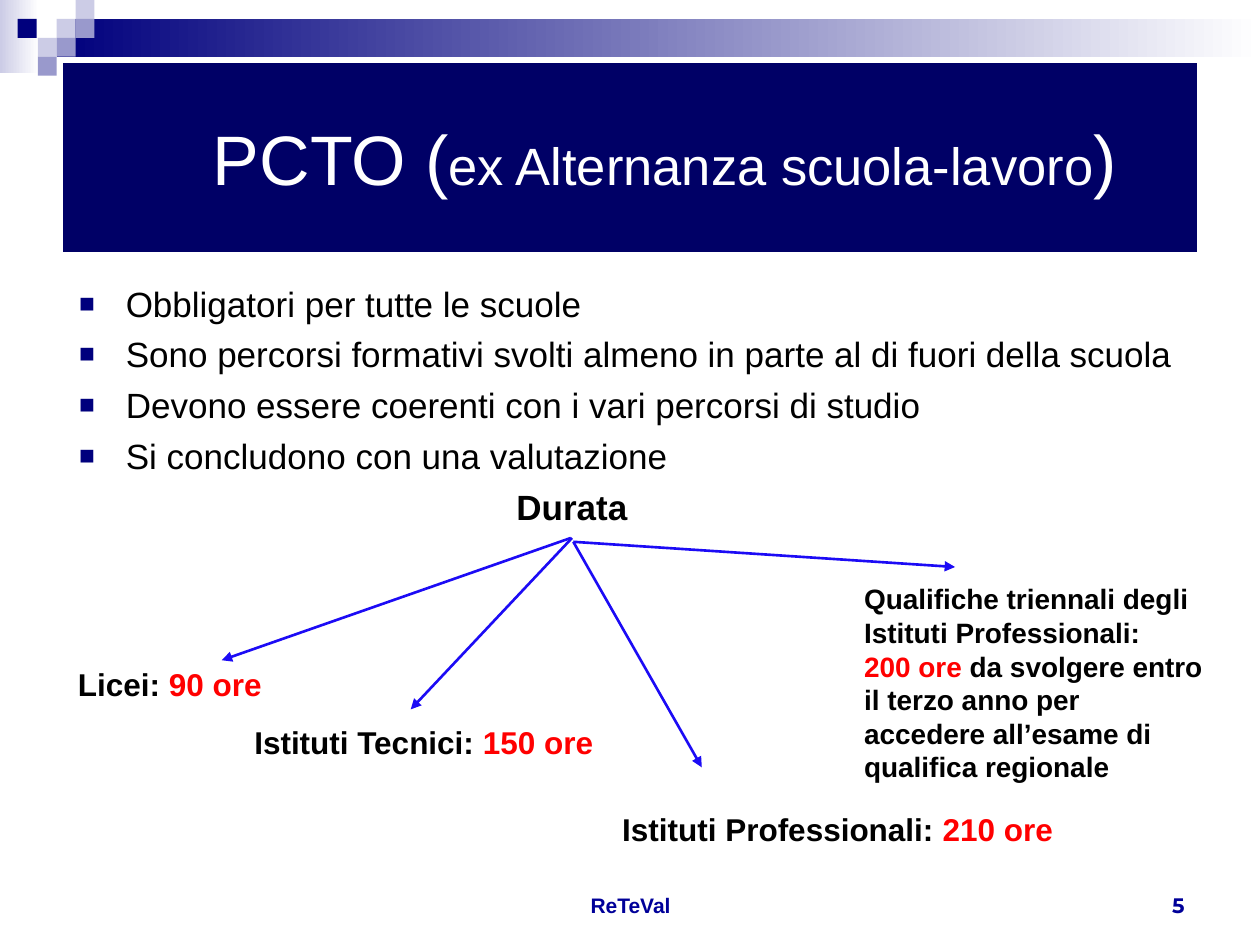
from dataclasses import dataclass

from lxml import etree
from pptx import Presentation
from pptx.dml.color import RGBColor
from pptx.enum.shapes import MSO_CONNECTOR, MSO_SHAPE
from pptx.enum.text import MSO_ANCHOR, MSO_AUTO_SIZE, PP_ALIGN
from pptx.oxml.ns import qn
from pptx.util import Inches, Pt

RECTANGLE = MSO_SHAPE.RECTANGLE
STRAIGHT = MSO_CONNECTOR.STRAIGHT
TOP, MIDDLE, BOTTOM = MSO_ANCHOR.TOP, MSO_ANCHOR.MIDDLE, MSO_ANCHOR.BOTTOM
LEFT, CENTER, RIGHT = PP_ALIGN.LEFT, PP_ALIGN.CENTER, PP_ALIGN.RIGHT
NO_AUTOFIT = MSO_AUTO_SIZE.NONE

NAVY, LILAC, PERIWINKLE = "00007D", "CCCCE6", "9999CC"
TITLE_BLUE, FOOTER_BLUE, ARROW_BLUE = "000066", "000099", "1C0BF5"
WHITE, BLACK, RED = "FFFFFF", "000000", "FF0000"
SQUARE_SIDE = 0.15


@dataclass
class Box:
    left: float
    top: float
    width: float
    height: float


@dataclass
class Words:
    text: str
    size: float = 18
    color: str = BLACK
    bold: bool = True
    font: str = "Arial"


@dataclass
class Label:
    box: Box
    lines: list[list[Words]]
    anchor: MSO_ANCHOR = TOP
    align: PP_ALIGN = LEFT
    wrap: bool = True


@dataclass
class Arrow:
    start: tuple[float, float]
    end: tuple[float, float]


def rgb(value: str) -> RGBColor:
    return RGBColor.from_string(value)


def lengths(box: Box) -> list[Inches]:
    return [Inches(v) for v in (box.left, box.top, box.width, box.height)]


def add_rectangle(slide, box: Box, color: str, fade_to: str = "") -> None:
    shape = slide.shapes.add_shape(RECTANGLE, *lengths(box))
    shape.shadow.inherit = False
    shape.line.fill.background()
    if fade_to:
        shape.fill.gradient()
        shape.fill.gradient_angle = 0
        for stop, shade in zip(shape.fill.gradient_stops, (color, fade_to)):
            stop.color.rgb = rgb(shade)
    else:
        shape.fill.solid()
        shape.fill.fore_color.rgb = rgb(color)


def add_words(paragraph, pieces: list[Words]) -> None:
    for words in pieces:
        run = paragraph.add_run()
        run.text = words.text
        run.font.size = Pt(words.size)
        run.font.name = words.font
        run.font.bold = words.bold
        run.font.color.rgb = rgb(words.color)


def add_label(slide, label: Label):
    frame = slide.shapes.add_textbox(*lengths(label.box)).text_frame
    frame.word_wrap = label.wrap
    frame.vertical_anchor = label.anchor
    for index, pieces in enumerate(label.lines):
        paragraph = frame.add_paragraph() if index else frame.paragraphs[0]
        paragraph.alignment = label.align
        add_words(paragraph, pieces)
    return frame


def indent(paragraph, margin: float, first_line: float) -> None:
    properties = paragraph._p.get_or_add_pPr()
    properties.set("marL", str(Inches(margin)))
    properties.set("indent", str(Inches(first_line)))


def add_bullet(paragraph, color: str) -> None:
    properties = paragraph._p.get_or_add_pPr()
    bullet_color = etree.SubElement(properties, qn("a:buClr"))
    etree.SubElement(bullet_color, qn("a:srgbClr"), val=color)
    etree.SubElement(properties, qn("a:buSzPct"), val="75000")
    etree.SubElement(properties, qn("a:buFont"), typeface="Arial")
    etree.SubElement(properties, qn("a:buChar"), char="■")


def add_arrow(slide, arrow: Arrow) -> None:
    points = [Inches(v) for v in arrow.start + arrow.end]
    connector = slide.shapes.add_connector(STRAIGHT, *points)
    connector.line.width = Pt(1.5)
    connector.line.color.rgb = rgb(ARROW_BLUE)
    etree.SubElement(connector.line._get_or_add_ln(), qn("a:tailEnd"), type="triangle")
    etree.SubElement(connector._element.spPr, qn("a:effectLst"))


def add_title(slide, box: Box, pieces: list[Words]) -> None:
    title = slide.shapes.title
    title.left, title.top, title.width, title.height = lengths(box)
    title.fill.solid()
    title.fill.fore_color.rgb = rgb(TITLE_BLUE)
    frame = title.text_frame
    frame.auto_size = NO_AUTOFIT
    frame.word_wrap = True
    frame.vertical_anchor = MIDDLE
    frame.margin_left = Inches(1.19)
    frame.paragraphs[0].alignment = LEFT
    add_words(frame.paragraphs[0], pieces)


def add_overview(slide, box: Box, points: list[str], heading: str) -> None:
    lines = [[Words(point, 20, bold=False)] for point in points]
    frame = add_label(slide, Label(box, lines + [[Words(heading, 20)]]))
    for paragraph in frame.paragraphs:
        paragraph.space_before = Pt(5)
    *bulleted, last = frame.paragraphs
    for paragraph in bulleted:
        indent(paragraph, 0.38, -0.37)
        add_bullet(paragraph, NAVY)
    indent(last, 3.48, 0)


SQUARES = [
    (0.45, 0.15, LILAC), (0.6, 0, LILAC), (0.6, 0.15, PERIWINKLE), (0.3, 0.3, LILAC),
    (0.14, 0.15, NAVY), (0.45, 0.3, PERIWINKLE), (0.3, 0.45, PERIWINKLE),
]
TITLE = [
    Words("PCTO (", 40, WHITE, False),
    Words("ex Alternanza scuola-lavoro", 30, WHITE, False),
    Words(")", 40, WHITE, False),
]
POINTS = [
    "Obbligatori per tutte le scuole",
    "Sono percorsi formativi svolti almeno in parte al di fuori della scuola",
    "Devono essere coerenti con i vari percorsi di studio",
    "Si concludono con una valutazione",
]
ARROWS = [
    Arrow((4.53, 4.27), (1.76, 5.24)),
    Arrow((4.54, 4.27), (3.26, 5.63)),
    Arrow((4.55, 4.3), (7.58, 4.5)),
    Arrow((4.55, 4.3), (5.57, 6.09)),
]
LABELS = [
    Label(Box(0.52, 5.23, 1.66, 0.4), [[Words("Licei: "), Words("90 ore", color=RED)]], wrap=False),
    Label(Box(1.92, 5.69, 2.9, 0.4),
          [[Words("Istituti Tecnici: "), Words("150 ore", color=RED)]], wrap=False),
    Label(Box(4.84, 6.38, 3.63, 0.4),
          [[Words("Istituti Professionali: "), Words("210 ore", color=RED)]], wrap=False),
    Label(Box(6.76, 4.57, 2.99, 1.96), [
        [Words("Qualifiche triennali degli", 16)],
        [Words("Istituti Professionali:", 16)],
        [Words("200 ore ", 16, RED), Words("da svolgere entro il terzo anno per", 16)],
        [Words("accedere all’esame di", 16)],
        [Words("qualifica regionale", 16)],
    ]),
    Label(Box(3.42, 6.83, 3.17, 0.5), [[Words("ReTeVal", 12, FOOTER_BLUE)]], BOTTOM, CENTER),
    Label(Box(7.17, 6.83, 2.33, 0.5),
          [[Words("5", 12, FOOTER_BLUE, font="Montserrat")]], BOTTOM, RIGHT),
]


def main() -> None:
    deck = Presentation()
    deck.slide_width, deck.slide_height = Inches(10), Inches(7.5)
    slide = deck.slides.add_slide(deck.slide_layouts[5])
    add_rectangle(slide, Box(0, 0, 0.31, 0.58), LILAC, WHITE)
    add_rectangle(slide, Box(0.45, 0.15, 9.55, 0.3), NAVY, WHITE)
    for left, top, color in SQUARES:
        add_rectangle(slide, Box(left, top, SQUARE_SIDE, SQUARE_SIDE), color)
    add_title(slide, Box(0.5, 0.5, 9, 1.5), TITLE)
    add_overview(slide, Box(0.52, 2.19, 9, 4.67), POINTS, "Durata")
    for arrow in ARROWS:
        add_arrow(slide, arrow)
    for label in LABELS:
        add_label(slide, label)
    deck.save("out.pptx")


if __name__ == "__main__":
    main()
